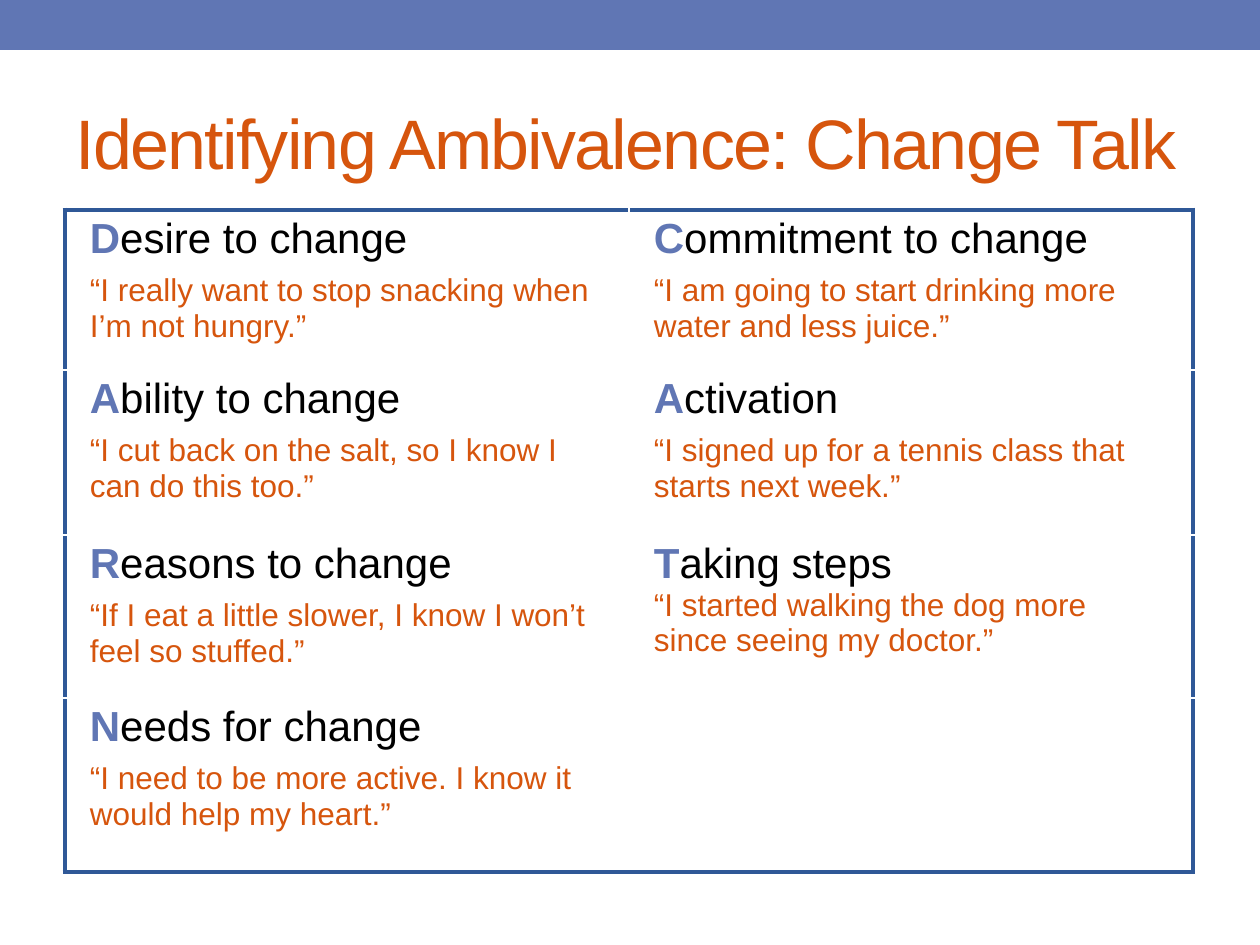
from lxml import etree
from pptx import Presentation
from pptx.dml.color import RGBColor
from pptx.enum.shapes import MSO_SHAPE
from pptx.enum.text import MSO_ANCHOR, PP_ALIGN
from pptx.oxml.ns import qn
from pptx.util import Pt

RECT = MSO_SHAPE.RECTANGLE
MIDDLE = MSO_ANCHOR.MIDDLE
LEFT = PP_ALIGN.LEFT
SCALE = 914400 / 126
BLUE, ORANGE, BLACK, NAVY = "6076B4", "D6550D", "000000", "2F5897"


def px(n):
    return round(n * SCALE)


def style(font, size, color, bold=False):
    font.name = "Arial"
    font.size = Pt(size)
    font.bold = bold
    font.color.rgb = RGBColor.from_string(color)


prs = Presentation()
prs.slide_width, prs.slide_height = px(1260), px(945)
slide = prs.slides.add_slide(prs.slide_layouts[5])

# Top band
band = slide.shapes.add_shape(RECT, 0, 0, px(1260), px(50))
band.shadow.inherit = False
band.fill.solid()
band.fill.fore_color.rgb = RGBColor.from_string(BLUE)
band.line.fill.background()

# Title
title = slide.shapes.title
title.left, title.top, title.width, title.height = px(63), px(73), px(1134), px(136)
title.text_frame.text = "Identifying Ambivalence: Change Talk"
title.text_frame.vertical_anchor = MIDDLE
head = title.text_frame.paragraphs[0]
head.alignment = LEFT
style(head.font, 40, ORANGE)
head.runs[0].font._element.set("spc", "-100")

# Change talk: heading, quote and gap between them for each cell
rows = [
    [("Desire to change", "“I really want to stop snacking when I’m not hungry.”", 6),
     ("Commitment to change", "“I am going to start drinking more water and less juice.”", 6)],
    [("Ability to change", "“I cut back on the salt, so I know I can do this too.”", 6),
     ("Activation", "“I signed up for a tennis class that starts next week.”", 6)],
    [("Reasons to change", "“If I eat a little slower, I know I won’t feel so stuffed.”", 6),
     ("Taking steps", "“I started walking the dog more since seeing my doctor.”", 0)],
    [("Needs for change", "“I need to be more active. I know it would help my heart.”", 6),
     None],
]
tall = [160, 165, 163, 174]
frame = slide.shapes.add_table(4, 2, px(65), px(210), px(1128), px(sum(tall)))
table = frame.table
table.first_row = table.horz_banding = False
for col in table.columns:
    col.width = px(564)

for r, row in enumerate(rows):
    table.rows[r].height = px(tall[r])
    for c, item in enumerate(row):
        cell = table.cell(r, c)
        cell.margin_left = cell.margin_right = px(25)
        cell.margin_top = cell.margin_bottom = px(6)
        cell.fill.background()

        # Outer border only
        sides = [("a:lnL", c == 0), ("a:lnR", c == 1),
                 ("a:lnT", r == 0), ("a:lnB", r == 3)]
        edges = [tag for tag, outer in sides if outer]
        props = cell._tc.get_or_add_tcPr()
        for i, tag in enumerate(edges):
            line = etree.Element(qn(tag), w=str(Pt(3)))
            fill = etree.SubElement(line, qn("a:solidFill"))
            etree.SubElement(fill, qn("a:srgbClr"), val=NAVY)
            props.insert(i, line)

        # Heading with a marked first letter, then the quote
        if item:
            name, quote, gap = item
            top = cell.text_frame.paragraphs[0]
            top.space_after = Pt(gap)
            for text, color, bold in [(name[0], BLUE, True), (name[1:], BLACK, False)]:
                run = top.add_run()
                run.text = text
                style(run.font, 24, color, bold)
            para = cell.text_frame.add_paragraph()
            para.text = quote
            style(para.font, 18, ORANGE)

prs.save("out.pptx")
